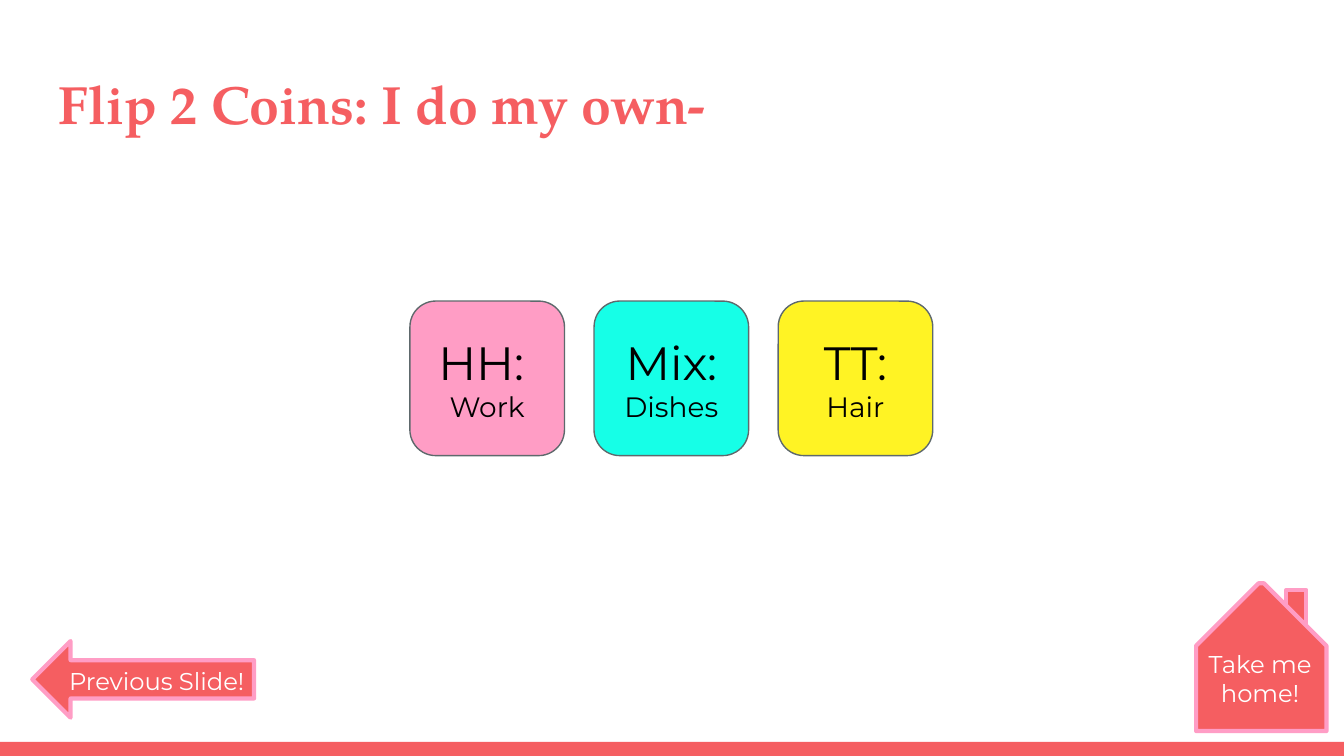
import pptx
import pptx.util
import pptx.dml.color
import pptx.enum.shapes
import pptx.enum.text

Inches = pptx.util.Inches
Pt = pptx.util.Pt
SHAPE = pptx.enum.shapes.MSO_SHAPE
ANCHOR = pptx.enum.text.MSO_ANCHOR
ALIGN = pptx.enum.text.PP_ALIGN

COLORS = {
    "coral": "F55E61",
    "pink": "FF9DC5",
    "aqua": "16FFE7",
    "yellow": "FFF324",
    "gray": "5E696C",
    "black": "000000",
    "white": "FFFFFF",
}


class SlideBuilder:
    body_font = "Montserrat"
    title_font = "TeX Gyre Pagella"

    def __init__(self, slide):
        self.slide = slide

    def color(self, name):
        return pptx.dml.color.RGBColor.from_string(COLORS[name])

    def shape(self, kind, box, fill, line=None, width=0.75, adjust=()):
        sp = self.slide.shapes.add_shape(kind, *map(Inches, box))
        sp.shadow.inherit = False
        sp.fill.solid()
        sp.fill.fore_color.rgb = self.color(fill)
        if line:
            sp.line.color.rgb = self.color(line)
            sp.line.width = Pt(width)
        else:
            sp.line.fill.background()
        for i, value in enumerate(adjust):
            sp.adjustments[i] = value
        return sp

    def set_lines(self, sp, lines, color, font=body_font, align=ALIGN.CENTER,
                  anchor=ANCHOR.TOP, bold=False):
        """Fill a shape with one paragraph per (text, size) pair."""
        tf = sp.text_frame
        tf.word_wrap = True
        tf.vertical_anchor = anchor
        tf.margin_left = tf.margin_right = Inches(0.1)
        tf.margin_top = tf.margin_bottom = Inches(0.1)
        tf.text = "\n".join(text for text, _ in lines)
        for p, (_, size) in zip(tf.paragraphs, lines):
            p.alignment = align
            for r in p.runs:
                r.font.name = font
                r.font.size = Pt(size)
                r.font.bold = bold
                r.font.color.rgb = self.color(color)

    def text(self, box, text, size, color, **style):
        sp = self.slide.shapes.add_textbox(*map(Inches, box))
        self.set_lines(sp, [(text, size)], color, **style)

    def title(self, text):
        self.text((0.34, 0.43, 9.32, 0.68), text, 28.8, "coral",
                  font=self.title_font, align=ALIGN.LEFT, bold=True)

    def card(self, left, heading, chore, fill):
        sp = self.shape(SHAPE.ROUNDED_RECTANGLE, (left, 2.24, 1.15, 1.15),
                        fill, "gray", adjust=[0.167])
        self.set_lines(sp, [(heading, 25), (chore, 15)], "black",
                       anchor=ANCHOR.MIDDLE)

    def button_part(self, kind, box, adjust=()):
        self.shape(kind, box, "coral", "pink", 2.25, adjust)

    def button_label(self, box, text):
        self.text(box, text, 13, "white")


def main():
    prs = pptx.Presentation()
    prs.slide_width = Inches(10)
    prs.slide_height = Inches(5.625)
    s = SlideBuilder(prs.slides.add_slide(prs.slide_layouts[6]))

    s.shape(SHAPE.RECTANGLE, (0, 5.52, 10, 0.11), "coral")
    s.title("Flip 2 Coins: I do my own-")

    outcomes = [
        ("HH: ", "Work", "pink"),
        ("Mix:", "Dishes", "aqua"),
        ("TT:", "Hair", "yellow"),
    ]
    for i, (heading, chore, fill) in enumerate(outcomes):
        s.card(3.05 + 1.37 * i, heading, chore, fill)

    # Home button: chimney behind the house
    s.button_part(SHAPE.RECTANGLE, (9.57, 4.39, 0.15, 0.4))
    s.button_part(SHAPE.SNIP_2_SAME_RECTANGLE, (8.9, 4.34, 0.97, 1.1),
                  [0.48, 0])
    s.button_label((8.89, 4.73, 0.97, 0.68), "Take me home!")

    s.button_part(SHAPE.LEFT_ARROW, (0.24, 4.77, 1.65, 0.57), [0.5, 0.5])
    s.button_label((0.34, 4.86, 1.65, 0.31), "Previous Slide!")

    prs.save("out.pptx")


if __name__ == "__main__":
    main()
